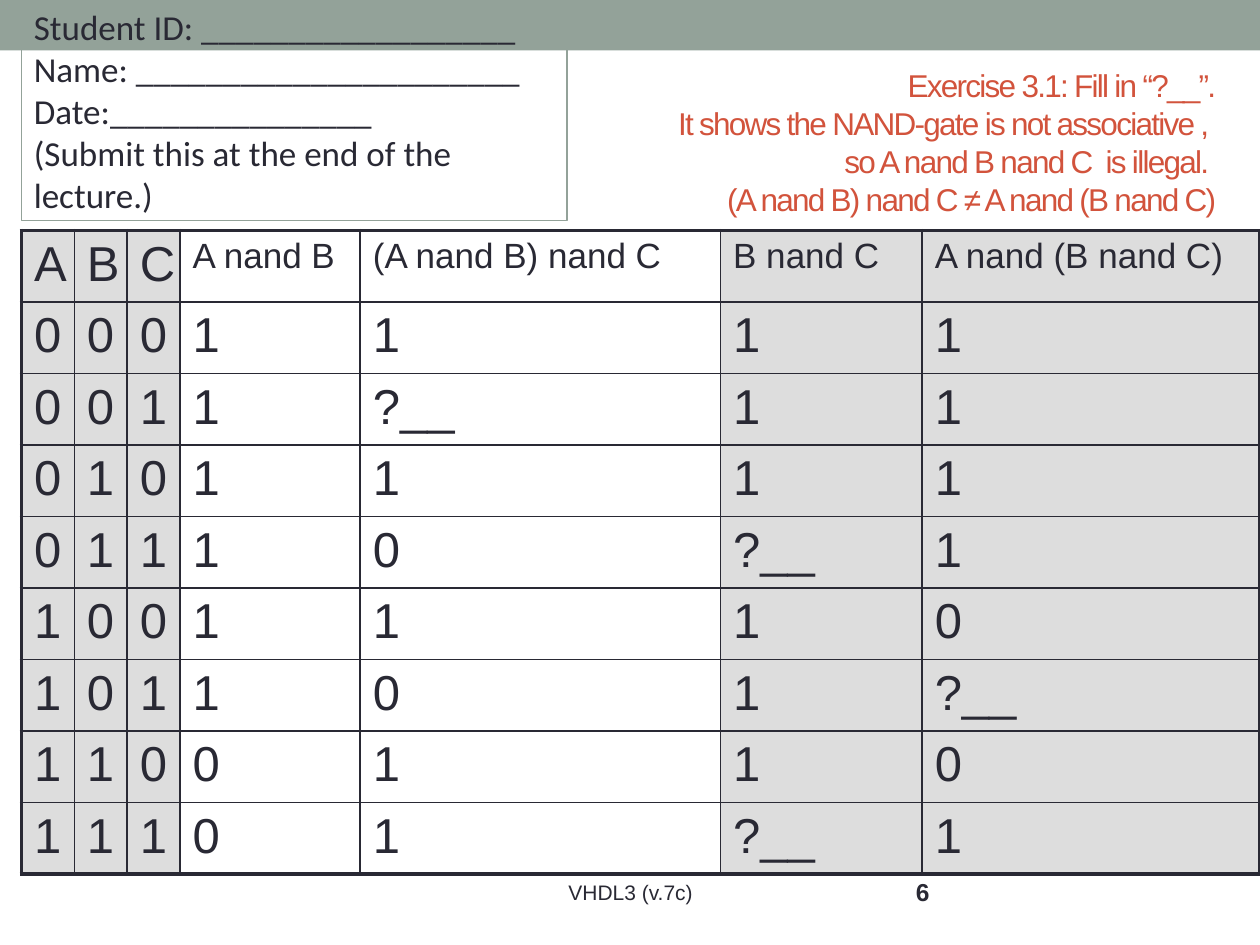
import dataclasses

import lxml.etree
import pptx
import pptx.dml.color
import pptx.enum.shapes
import pptx.enum.text
import pptx.oxml.ns
import pptx.util

Inches = pptx.util.Inches
Pt = pptx.util.Pt
ALIGN = pptx.enum.text.PP_ALIGN
MIDDLE = pptx.enum.text.MSO_ANCHOR.MIDDLE


@dataclasses.dataclass(frozen=True)
class Theme:
    ink: str = "292934"
    sage: str = "93A299"
    accent: str = "D2533C"
    shade: str = "DDDDDD"
    sans: str = "Arial"
    form: str = "Calibri"
    title: float = 18
    field: float = 20
    heading: float = 20
    value: float = 28
    footer: float = 12
    number: float = 14
    inner: float = 1
    outer: float = 2.25
    outline: float = 0.75


THEME = Theme()

EXERCISE = (
    "Exercise 3.1: Fill in “?__”.\n"
    "It shows the NAND-gate is not associative , \n"
    "so A nand B nand C  is illegal. \n"
    "(A nand B) nand C ≠ A nand (B nand C)"
)
STUDENT_FIELDS = (
    "Student ID: __________________\n"
    "Name: ______________________\n"
    "Date:_______________"
)
SUBMIT_NOTE = "(Submit this at the end of the lecture.)"

HEADINGS = ["A", "B", "C", "A nand B", "(A nand B) nand C", "B nand C", "A nand (B nand C)"]
TRUTH_ROWS = [
    "0 0 0 1 1 1 1",
    "0 0 1 1 ?__ 1 1",
    "0 1 0 1 1 1 1",
    "0 1 1 1 0 ?__ 1",
    "1 0 0 1 1 1 0",
    "1 0 1 1 0 1 ?__",
    "1 1 0 0 1 1 0",
    "1 1 1 0 1 ?__ 1",
]
COLUMN_WIDTHS = [0.42, 0.42, 0.42, 1.43, 2.86, 1.6, 2.68]
INPUT_COLUMNS = 3
PLAIN_COLUMNS = (3, 4)
TABLE_HEIGHT = 5.1


def rgb(value):
    return pptx.dml.color.RGBColor.from_string(value)


def apply(target, values):
    for name, value in values.items():
        setattr(target, name, value)


def write(paragraph, text, color=THEME.ink, align=None, tracking=None, **font):
    paragraph.text = text
    paragraph.alignment = align
    for run in paragraph.runs:
        apply(run.font, font)
        run.font.color.rgb = rgb(color)
        if tracking is not None:
            run.font._element.set("spc", str(tracking))


def add_label(slide, place, text, **style):
    frame = slide.shapes.add_textbox(*map(Inches, place)).text_frame
    apply(frame, {"word_wrap": True, "vertical_anchor": MIDDLE})
    write(frame.paragraphs[0], text, **style)


def add_box(slide, place):
    box = slide.shapes.add_shape(
        pptx.enum.shapes.MSO_SHAPE.RECTANGLE, *map(Inches, place)
    )
    box.shadow.inherit = False
    return box


def add_banner(slide):
    banner = add_box(slide, (0, 0, 10, 0.4))
    banner.fill.solid()
    banner.fill.fore_color.rgb = rgb(THEME.sage)
    banner.line.fill.background()


def add_student_form(slide):
    form = add_box(slide, (0.17, 0, 4.33, 1.75))
    form.fill.background()
    form.line.color.rgb = rgb(THEME.sage)
    form.line.width = Pt(THEME.outline)
    frame = form.text_frame
    apply(frame, {"word_wrap": True, "vertical_anchor": MIDDLE})
    style = {"align": ALIGN.LEFT, "name": THEME.form, "size": Pt(THEME.field)}
    write(frame.paragraphs[0], STUDENT_FIELDS, **style)
    write(frame.add_paragraph(), SUBMIT_NOTE, **style)


def add_child(parent, tag, **attributes):
    return lxml.etree.SubElement(parent, pptx.oxml.ns.qn(tag), attributes)


def set_borders(cell, widths):
    properties = cell._tc.get_or_add_tcPr()
    for position, (side, width) in enumerate(widths.items()):
        border = add_child(properties, f"a:ln{side}", w=str(int(Pt(width))))
        add_child(add_child(border, "a:solidFill"), "a:srgbClr", val=THEME.ink)
        properties.insert(position, border)


def set_space_before(paragraph, percent):
    spacing = add_child(paragraph._p.get_or_add_pPr(), "a:spcBef")
    add_child(spacing, "a:spcPct", val=str(percent * 1000))


def fill_cell(cell, text, size, shaded):
    paragraph = cell.text_frame.paragraphs[0]
    write(paragraph, text, name=THEME.sans, size=Pt(size), bold=False)
    set_space_before(paragraph, 20)
    if shaded:
        cell.fill.solid()
        cell.fill.fore_color.rgb = rgb(THEME.shade)
    else:
        cell.fill.background()


def add_truth_table(slide):
    rows = [HEADINGS] + [row.split() for row in TRUTH_ROWS]
    last_row, last_column = len(rows) - 1, len(HEADINGS) - 1
    table = slide.shapes.add_table(
        len(rows), len(HEADINGS),
        Inches(0.17), Inches(1.83), Inches(sum(COLUMN_WIDTHS)), Inches(TABLE_HEIGHT),
    ).table
    apply(table, {"first_row": False, "horz_banding": False})
    for column, width in zip(table.columns, COLUMN_WIDTHS):
        column.width = Inches(width)
    for row in table.rows:
        row.height = Inches(TABLE_HEIGHT / len(rows))
    for r, values in enumerate(rows):
        for c, text in enumerate(values):
            cell = table.cell(r, c)
            is_formula = r == 0 and c >= INPUT_COLUMNS
            size = THEME.heading if is_formula else THEME.value
            fill_cell(cell, text, size, c not in PLAIN_COLUMNS)
            edges = {"L": c == 0, "R": c == last_column, "T": r == 0, "B": r == last_row}
            set_borders(cell, {
                side: THEME.outer if is_edge else THEME.inner
                for side, is_edge in edges.items()
            })


def main():
    deck = pptx.Presentation()
    apply(deck, {"slide_width": Inches(10), "slide_height": Inches(7.5)})
    slide = deck.slides.add_slide(deck.slide_layouts[6])
    add_banner(slide)
    add_label(slide, (1.75, 0.5, 8, 1.25), EXERCISE, color=THEME.accent,
              align=ALIGN.RIGHT, tracking=-100, name=THEME.sans, size=Pt(THEME.title))
    add_truth_table(slide)
    add_label(slide, (3.42, 6.83, 3.17, 0.5), "VHDL3 (v.7c)",
              align=ALIGN.CENTER, name=THEME.sans, size=Pt(THEME.footer))
    add_label(slide, (7.17, 6.83, 2.33, 0.5), "6",
              name=THEME.sans, size=Pt(THEME.number), bold=True)
    add_student_form(slide)
    deck.save("out.pptx")


if __name__ == "__main__":
    main()
